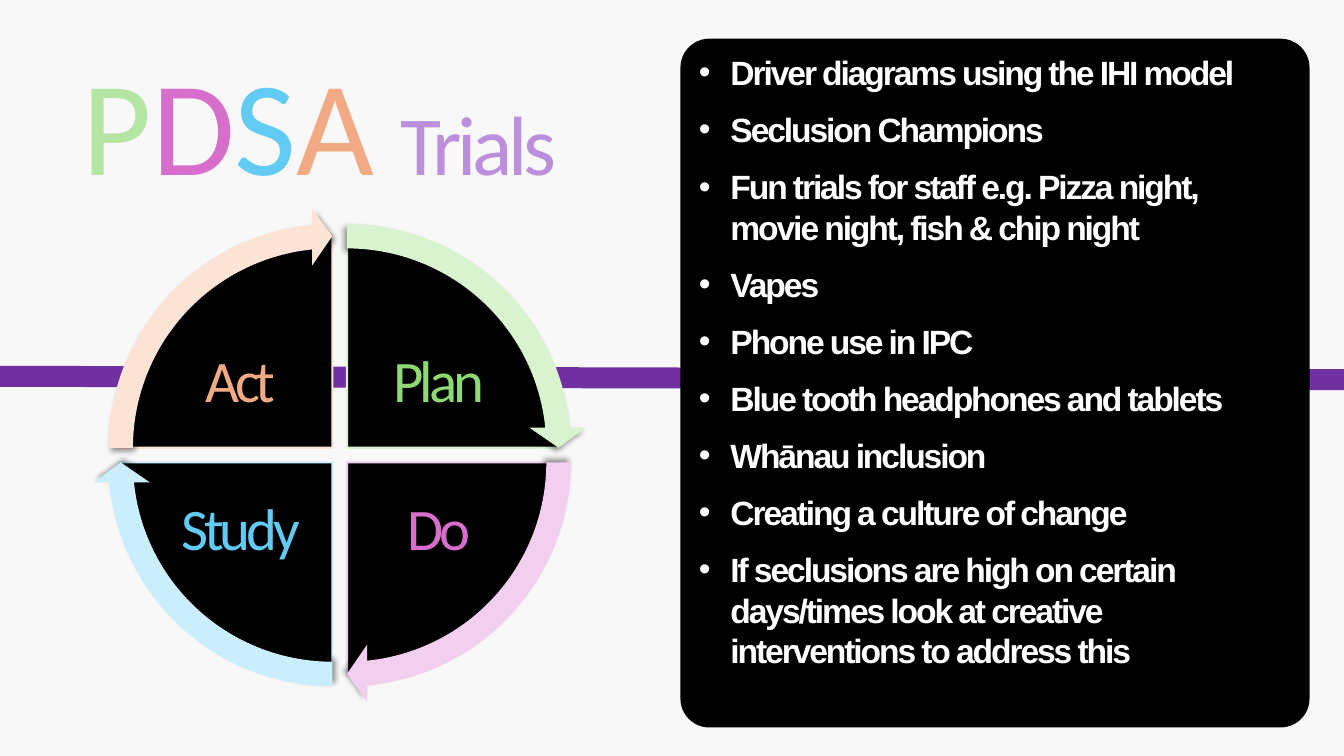
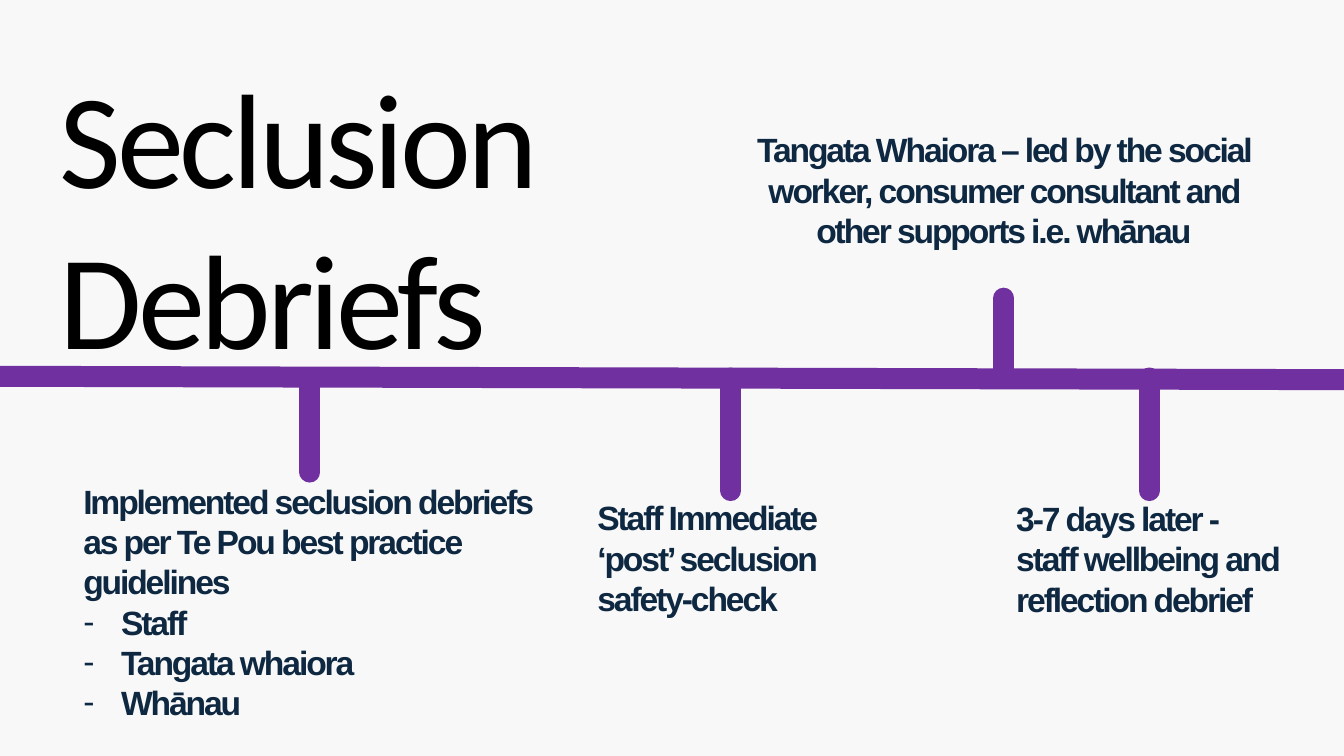
"""Build two slides on seclusion trials and debriefs."""
import dataclasses

import lxml.etree
import pptx
import pptx.dml.color
import pptx.enum.shapes
import pptx.enum.text
import pptx.oxml.ns
import pptx.util

SHAPES = pptx.enum.shapes.MSO_SHAPE
ALIGN = pptx.enum.text.PP_ALIGN
ANCHOR = pptx.enum.text.MSO_ANCHOR


@dataclasses.dataclass(frozen=True)
class Theme:
    """Hold the colours, fonts, type sizes and strokes of the deck."""
    paper: str = "F8F8F8"
    black: str = "000000"
    white: str = "FFFFFF"
    navy: str = "0E2841"
    purple: str = "7030A0"
    lilac: str = "BC8FDD"
    lime: str = "B4E5A2"
    green: str = "8ED973"
    pink: str = "D86ECC"
    blue: str = "61CBF4"
    orange: str = "F2AA84"
    pale_green: str = "D9F2D0"
    pale_pink: str = "F2CFEE"
    pale_blue: str = "CAEEFB"
    pale_orange: str = "FBE3D6"
    display_font: str = "Calibri"
    body_font: str = "Arial"
    title_size: int = 96
    subtitle_size: int = 60
    label_size: int = 42
    body_size: int = 24
    display_tracking: float = -3
    body_tracking: float = -1.5
    leading: float = 1.2
    paragraph_gap: int = 12
    bar_width: int = 15
    outline_width: float = 1.5
    corner: float = 0.046


THEME = Theme()
COLUMNS, ROWS = 160, 90
SLIDE_WIDTH, SLIDE_HEIGHT = pptx.util.Inches(13.333), pptx.util.Inches(7.5)
BAR_LEFT_ROW, BAR_RIGHT_ROW = 44.8, 45.2
TITLE_COLUMNS = 82.9
TITLE_INSETS = (1.2, 1.44, 1.2, 0)
BODY_INSETS = (1.2, 0.6, 1.2, 0.6)
LABEL_INSETS = (0.72, 1.3, 0.72, 0.72)
FULL_TURN, QUARTER_TURN = 216, 54

TRIALS = (
    "Driver diagrams using the IHI model",
    "Seclusion Champions",
    "Fun trials for staff e.g. Pizza night, movie night, fish & chip night",
    "Vapes",
    "Phone use in IPC",
    "Blue tooth headphones and tablets",
    "Whānau inclusion",
    "Creating a culture of change",
    "If seclusions are high on certain days/times look at creative "
    "interventions to address this",
)
QUADRANTS = (
    ("Plan", 1, -1, THEME.green, THEME.pale_green),
    ("Do", 1, 1, THEME.pink, THEME.pale_pink),
    ("Study", -1, 1, THEME.blue, THEME.pale_blue),
    ("Act", -1, -1, THEME.orange, THEME.pale_orange),
)
DEBRIEFS = (
    ((8.3, 56.2, 57.2, 30.8), 0, ALIGN.LEFT,
     "Implemented seclusion debriefs as per Te Pou best practice guidelines",
     ("Staff", "Tangata whaiora", "Whānau")),
    ((69.7, 58.4, 34.6, 16.1), 0, ALIGN.LEFT,
     "Staff Immediate ‘post’ seclusion safety-check", ()),
    ((88.4, 14.5, 62.2, 21), 2, ALIGN.CENTER,
     "Tangata Whaiora – led by the social worker, consumer consultant and "
     "other supports i.e. whānau", ()),
    ((119.5, 58.4, 34.6, 21), 0, ALIGN.LEFT,
     "3-7 days later - staff wellbeing and reflection debrief", ()),
)


def across(columns):
    """Turn grid columns into a length."""
    return round(SLIDE_WIDTH * columns / COLUMNS)


def down(rows):
    """Turn grid rows into a length."""
    return round(SLIDE_HEIGHT * rows / ROWS)


def place(area):
    """Turn a left, top, width, height grid area into lengths."""
    left, top, width, height = area
    return across(left), down(top), across(width), down(height)


def centred(column, row, width, height):
    """Return the grid area around a centre point."""
    return column - width / 2, row - height / 2, width, height


def colour(code):
    """Return the colour for a hex code."""
    return pptx.dml.color.RGBColor.from_string(code)


def assign(target, values):
    """Set each named value on the target."""
    for name, value in values.items():
        setattr(target, name, value)


def add_element(parent, tag, **attributes):
    """Append a drawing element to the parent."""
    return lxml.etree.SubElement(parent, pptx.oxml.ns.qn(tag), attributes)


def set_frame(box, insets, anchor=ANCHOR.TOP):
    """Set wrapping, anchor and insets of a box and return its frame."""
    left, top, right, bottom = insets
    assign(box.text_frame, {
        "word_wrap": True, "vertical_anchor": anchor,
        "margin_left": across(left), "margin_top": down(top),
        "margin_right": across(right), "margin_bottom": down(bottom)})
    return box.text_frame


def add_span(para, text, code, size, font, tracking, bold=False):
    """Add a formatted run to a paragraph."""
    span = para.add_run()
    span.text = text
    assign(span.font, {"size": pptx.util.Pt(size), "name": font, "bold": bold})
    span.font.color.rgb = colour(code)
    span.font._element.set("spc", str(round(tracking * 100)))


def add_display(para, text, code, size):
    """Add a run in the display style."""
    add_span(para, text, code, size, THEME.display_font, THEME.display_tracking)


def add_bullet(para, mark, indent):
    """Give a paragraph a hanging bullet."""
    properties = para._p.get_or_add_pPr()
    properties.set("marL", str(across(indent)))
    properties.set("indent", str(-across(indent)))
    add_element(properties, "a:buFont", typeface=THEME.body_font)
    add_element(properties, "a:buChar", char=mark)


def fill_body(frame, lines, code, gap=0, align=ALIGN.LEFT):
    """Write body lines given as text, bullet mark and indent."""
    for index, (text, mark, indent) in enumerate(lines):
        para = frame.add_paragraph() if index else frame.paragraphs[0]
        if mark:
            add_bullet(para, mark, indent)
        assign(para, {
            "alignment": align, "space_after": pptx.util.Pt(gap),
            "line_spacing": pptx.util.Pt(THEME.body_size * THEME.leading)})
        add_span(para, text, code, THEME.body_size, THEME.body_font,
                 THEME.body_tracking, True)


def add_title(page, column, row, rows, spans):
    """Add a title made of text, colour and size spans."""
    box = page.shapes.add_textbox(*place((column, row, TITLE_COLUMNS, rows)))
    para = set_frame(box, TITLE_INSETS).paragraphs[0]
    para.line_spacing = pptx.util.Pt(THEME.title_size * THEME.leading)
    for text, code, size in spans:
        add_display(para, text, code, size)


def add_form(page, kind, area, adjustments, fill=None, outline=None):
    """Add a preset shape with a plain fill and outline."""
    form = page.shapes.add_shape(kind, *place(area))
    form.shadow.inherit = False
    for index, value in enumerate(adjustments):
        form.adjustments[index] = value
    if fill:
        form.fill.solid()
        form.fill.fore_color.rgb = colour(fill)
    else:
        form.fill.background()
    if outline:
        form.line.color.rgb = colour(outline)
        form.line.width = pptx.util.Pt(THEME.outline_width)
    else:
        form.line.fill.background()
    return form


def add_shadow(form, degrees):
    """Cast a soft shadow in the given direction."""
    effects = form._element.spPr.find(pptx.oxml.ns.qn("a:effectLst"))
    shadow = add_element(
        effects, "a:outerShdw", blurRad=str(pptx.util.Pt(4)),
        dist=str(pptx.util.Pt(3)), dir=str(degrees * 60000), rotWithShape="0")
    shade = add_element(shadow, "a:srgbClr", val=THEME.black)
    add_element(shade, "a:alpha", val="40000")


def add_bar(page, start, end, cap="flat"):
    """Add a thick purple line between two grid points."""
    bar = page.shapes.add_connector(
        pptx.enum.shapes.MSO_CONNECTOR.STRAIGHT,
        across(start[0]), down(start[1]), across(end[0]), down(end[1]))
    bar.line.color.rgb = colour(THEME.purple)
    bar.line.width = pptx.util.Pt(THEME.bar_width)
    bar.line._get_or_add_ln().set("cap", cap)
    add_element(bar._element.spPr, "a:effectLst")
    return bar


def add_timeline(page):
    """Add the bar that crosses the slide."""
    add_bar(page, (0, BAR_LEFT_ROW), (COLUMNS, BAR_RIGHT_ROW))


def add_label(page, area, text, code):
    """Add a centred quadrant label."""
    box = page.shapes.add_textbox(*place(area))
    para = set_frame(box, LABEL_INSETS, ANCHOR.MIDDLE).paragraphs[0]
    assign(para, {"alignment": ALIGN.CENTER, "line_spacing": 0.9})
    add_display(para, text, code, THEME.label_size)


def add_wheel(page, column, row):
    """Add the four quadrants, their labels and the arrows around them."""
    gap, pie, ring, head = 0.87, 50.88, 57.12, 3.275
    arrows = []
    for index, (text, side, level, code, pale) in enumerate(QUADRANTS):
        start = (3 + index) % 4 * QUARTER_TURN
        end = start + QUARTER_TURN
        middle = column + side * gap, row + level * gap
        add_form(page, SHAPES.PIE, centred(*middle, pie, pie),
                 (start, end % FULL_TURN), THEME.black, pale)
        add_label(page, centred(column + side * 11.8, row + level * 8.82,
                                18.72, 13.92), text, code)
        arrows.append((centred(*middle, ring, ring),
                       (0.051, head, end - head, start, 0.059), pale,
                       (135 + 90 * index) % 360))
    for area, adjustments, pale, degrees in arrows:
        arrow = add_form(page, SHAPES.CIRCULAR_ARROW, area, adjustments, pale)
        add_shadow(arrow, degrees)


def add_panel(page, area, fill=None):
    """Add a rounded panel and return it."""
    panel = add_form(page, SHAPES.ROUNDED_RECTANGLE, area, (THEME.corner,), fill)
    set_frame(panel, BODY_INSETS)
    return panel


def build_trials(page):
    """Build the slide with the cycle and the list of trials."""
    add_timeline(page)
    add_wheel(page, 40.44, 54.18)
    codes = THEME.lime, THEME.pink, THEME.blue, THEME.orange
    spans = [(letter, code, THEME.title_size)
             for letter, code in zip(("P", "D", "S", "A "), codes)]
    add_title(page, 8.64, 3.5, 20.6,
              spans + [("Trials", THEME.lilac, THEME.subtitle_size)])
    panel = add_panel(page, (81, 4.6, 74.9, 82), THEME.black)
    fill_body(panel.text_frame, [(text, "•", 3.75) for text in TRIALS],
              THEME.white, THEME.paragraph_gap)


def build_debriefs(page):
    """Build the slide with the debrief timeline."""
    add_title(page, 5.9, 5, 40,
              [("Seclusion Debriefs", THEME.black, THEME.title_size)])
    panels = []
    for area, site, align, text, items in DEBRIEFS:
        panel = add_panel(page, area)
        lines = [(text, None, 0)] + [(item, "-", 4.5) for item in items]
        fill_body(panel.text_frame, lines, THEME.navy, align=align)
        panels.append((panel, area[0] + area[2] / 2, site))
    add_timeline(page)
    for panel, column, site in panels:
        stem = add_bar(page, (column, ROWS / 2), (column, ROWS / 2), "rnd")
        stem.end_connect(panel, site)


def main():
    """Build and save the deck."""
    deck = pptx.Presentation()
    assign(deck, {"slide_width": SLIDE_WIDTH, "slide_height": SLIDE_HEIGHT})
    backdrop = deck.slide_master.background.fill
    backdrop.solid()
    backdrop.fore_color.rgb = colour(THEME.paper)
    for build in (build_trials, build_debriefs):
        build(deck.slides.add_slide(deck.slide_layouts[6]))
    deck.save("out.pptx")


if __name__ == "__main__":
    main()
